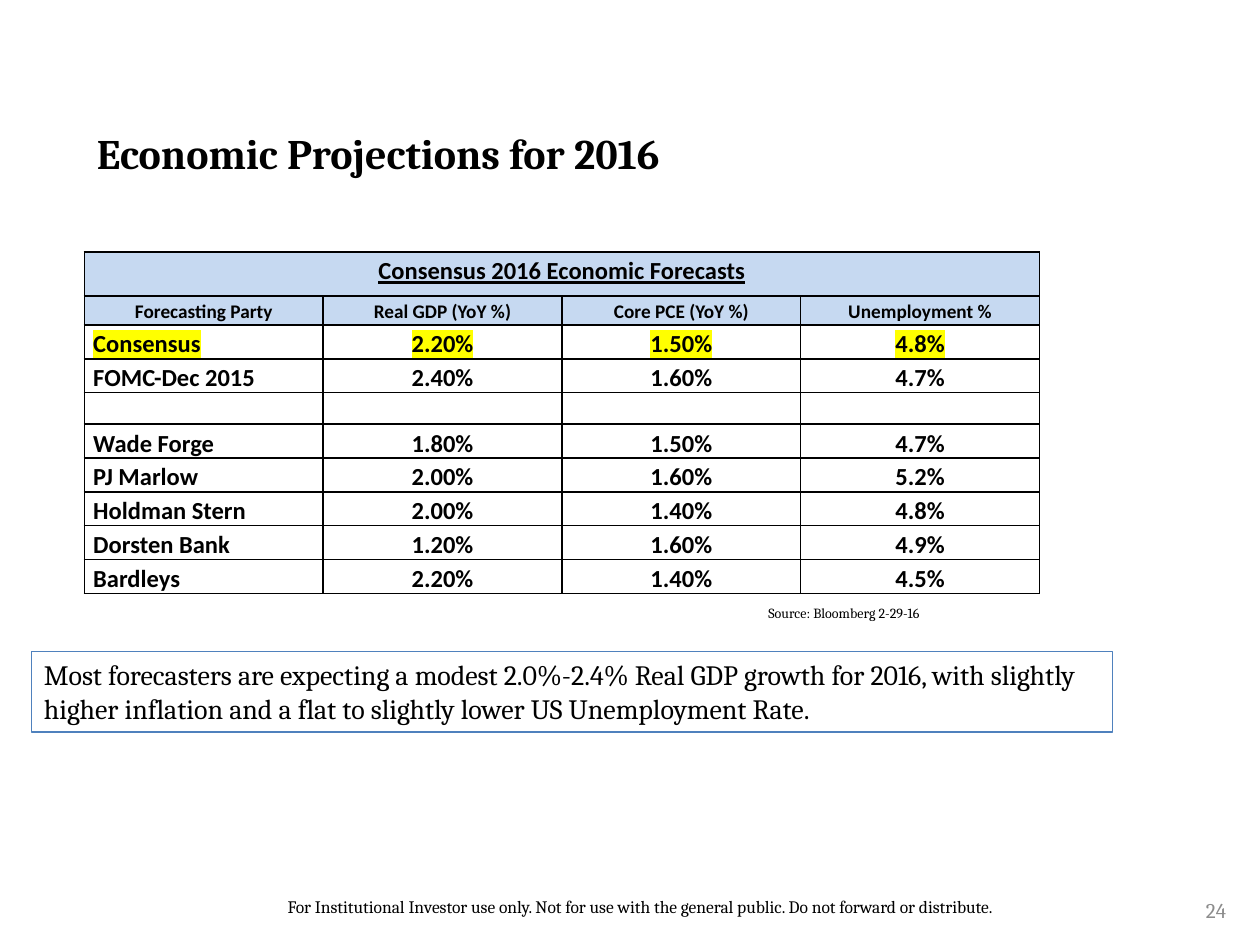
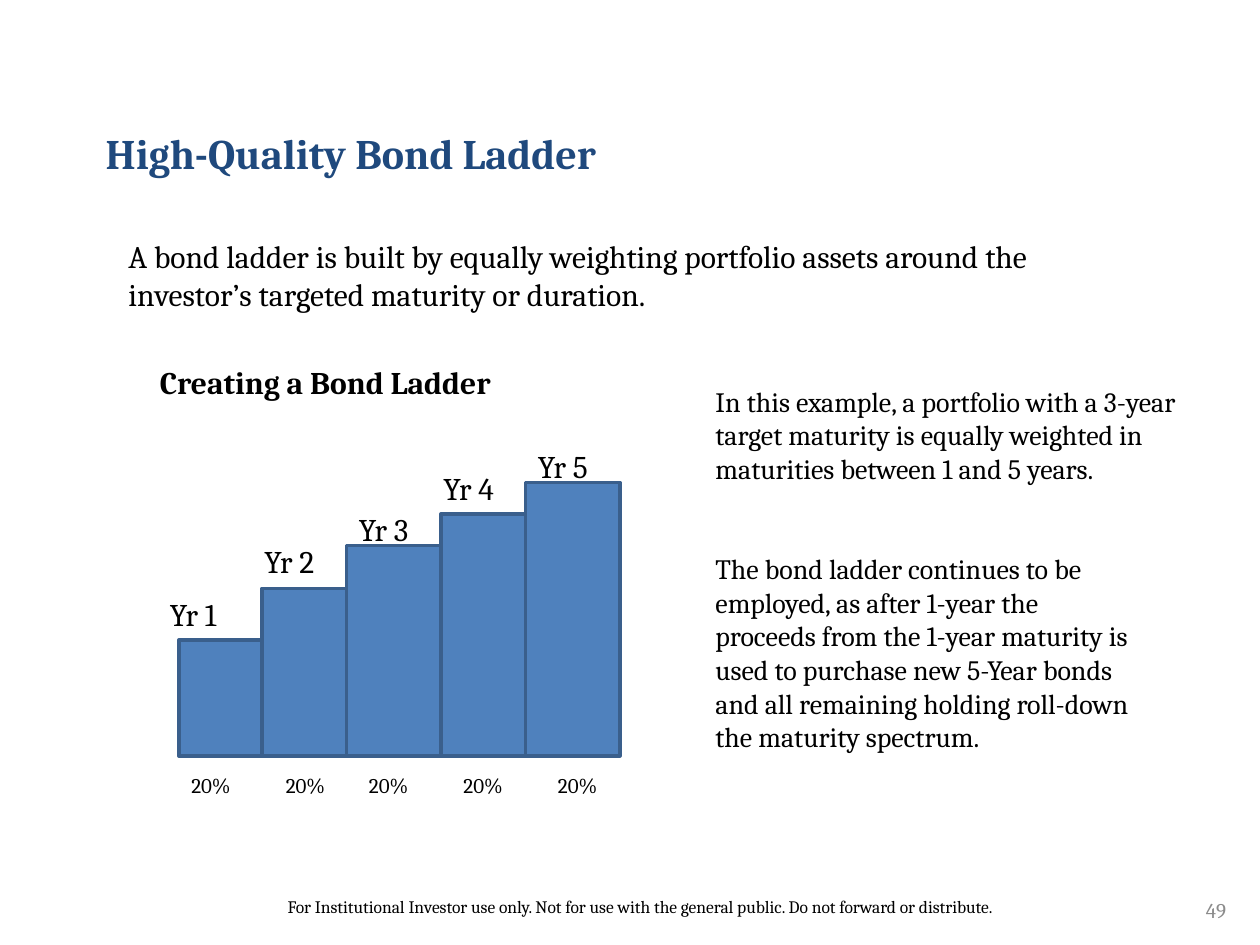
from pptx import Presentation
from pptx.util import Inches, Pt
from pptx.dml.color import RGBColor as RGB
from pptx.enum.shapes import MSO_SHAPE as SHAPE
from pptx.enum.text import PP_ALIGN as AL, MSO_ANCHOR as ANCHOR
from pptx.oxml.ns import qn
from lxml.etree import SubElement as Sub

# Content
NOTICE = ("For Institutional Investor use only. Not for use with the general "
          "public. Do not forward or distribute.")
CAST = {
    "title": "Economic Projections for 2016",
    "page": "24",
    "head": "Consensus 2016 Economic Forecasts",
    "cols": ("Forecasting Party", "Real GDP (YoY %)", "Core PCE (YoY %)", "Unemployment %"),
    "rows": [
        ("Consensus", "2.20%", "1.50%", "4.8%"),
        ("FOMC-Dec 2015", "2.40%", "1.60%", "4.7%"),
        ("", "", "", ""),
        ("Wade Forge", "1.80%", "1.50%", "4.7%"),
        ("PJ Marlow", "2.00%", "1.60%", "5.2%"),
        ("Holdman Stern", "2.00%", "1.40%", "4.8%"),
        ("Dorsten Bank", "1.20%", "1.60%", "4.9%"),
        ("Bardleys", "2.20%", "1.40%", "4.5%"),
    ],
    "source": "Source: Bloomberg 2-29-16",
    "note": "Most forecasters are expecting a modest 2.0%-2.4% Real GDP growth for 2016, "
            "with slightly higher inflation and a flat to slightly lower US Unemployment Rate.",
}
LADDER = {
    "title": "High-Quality Bond Ladder",
    "page": "49",
    "intro": "A bond ladder is built by equally weighting portfolio assets around the "
             "investor’s targeted maturity or duration.",
    "head": "Creating a Bond Ladder",
    "first": "In this example, a portfolio with a 3-year target maturity is equally "
             "weighted in maturities between 1 and 5 years.",
    "then": "The bond ladder continues to be employed, as after 1-year the proceeds from "
            "the 1-year maturity is used to purchase new 5-Year bonds and all remaining "
            "holding roll-down the maturity spectrum.",
}
# Rung: name, bar top, name left and top, share left
RUNGS = [
    ("Yr 1", 5.08, 1.25, 4.67, 1.42),
    ("Yr 2", 4.67, 2, 4.25, 2.17),
    ("Yr 3", 4.33, 2.75, 4, 2.83),
    ("Yr 4", 4.08, 3.42, 3.67, 3.58),
    ("Yr 5", 3.83, 4.17, 3.5, 4.33),
]
EDGES = (1.42, 2.08, 2.75, 3.5, 4.17, 4.92)
BASE = 6
SHARE = "20%"

# Shared style
COLOR = {"ink": "000000", "navy": "1F497D", "gray": "8C8C8C", "blue": "4F81BD",
         "edge": "3A5F8C", "pale": "C6D9F1", "mark": "FFFF00"}


def rgb(name):
    return RGB.from_string(COLOR[name])


def write(frame, text, size, color="ink", bold=False, align=AL.LEFT, font="Cambria"):
    para = frame.paragraphs[0]
    para.text = text
    para.alignment = align
    for run in para.runs:
        face = run.font
        face.name, face.size, face.bold = font, Pt(size), bold
        face.color.rgb = rgb(color)
    return para


def label(slide, box, text, size, anchor=ANCHOR.TOP, **style):
    frame = slide.shapes.add_textbox(*map(Inches, box)).text_frame
    frame.word_wrap = True
    frame.vertical_anchor = anchor
    write(frame, text, size, **style)


def block(slide, box, line, width, fill=None):
    shape = slide.shapes.add_shape(SHAPE.RECTANGLE, *map(Inches, box))
    shape.shadow.inherit = False
    if fill:
        shape.fill.solid()
        shape.fill.fore_color.rgb = rgb(fill)
    else:
        shape.fill.background()
    shape.line.color.rgb = rgb(line)
    shape.line.width = Pt(width)
    return shape


def page(deck, data, color, left=0.67):
    slide = deck.slides.add_slide(deck.slide_layouts[6])
    label(slide, (1.83, 7.06, 6.5, 0.27), NOTICE, 10, align=AL.CENTER)
    label(slide, (left, 0.75, 7.83, 0.92), data["title"], 24, ANCHOR.MIDDLE,
          color=color, bold=True)
    label(slide, (7.5, 7.02, 2.33, 0.4), data["page"], 12, ANCHOR.MIDDLE,
          color="gray", align=AL.RIGHT)
    return slide


# Table cells
def border(cell):
    props = cell._tc.get_or_add_tcPr()
    for side in ("lnL", "lnR", "lnT", "lnB"):
        line = Sub(props, qn("a:" + side), w=str(Pt(1)))
        Sub(Sub(line, qn("a:solidFill")), qn("a:srgbClr"), val=COLOR["ink"])


def mark(run):
    light = run._r.makeelement(qn("a:highlight"), {})
    Sub(light, qn("a:srgbClr"), val=COLOR["mark"])
    run._r.rPr.find(qn("a:solidFill")).addnext(light)


def put(cell, text, size, align, fill=None):
    cell.margin_left = cell.margin_right = Inches(0.07)
    cell.margin_top = cell.margin_bottom = 0
    border(cell)
    if fill:
        cell.fill.solid()
        cell.fill.fore_color.rgb = rgb(fill)
    else:
        cell.fill.background()
    para = write(cell.text_frame, text, size, bold=True, align=align, font="Calibri")
    if text:
        para.line_spacing = 1.15
    else:
        Sub(para._p, qn("a:endParaRPr"), sz="1200")
    return para


def forecast(slide):
    rows = [(CAST["head"], "", "", ""), CAST["cols"], *CAST["rows"]]
    high = [0.35, 0.23] + [0.25] * len(CAST["rows"])
    table = slide.shapes.add_table(len(rows), 4, Inches(0.67), Inches(2),
                                   Inches(7.58), Inches(sum(high))).table
    table.first_row = table.horz_banding = False
    for col in table.columns:
        col.width = Inches(7.58 / 4)
    for r, row in enumerate(rows):
        table.rows[r].height = Inches(high[r])
        top = r < 2
        for c, text in enumerate(row):
            align = AL.CENTER if top or c else AL.LEFT
            para = put(table.cell(r, c), text, 11 if r == 1 else 14, align,
                       "pale" if top else None)
            for run in para.runs:
                run.font.underline = r == 0
                if r == 2:
                    mark(run)
    table.cell(0, 0).merge(table.cell(0, 3))


# Slides
def projections(deck):
    slide = page(deck, CAST, "ink")
    forecast(slide)
    note = block(slide, (0.25, 5.17, 8.58, 0.64), "blue", 0.75)
    note.text_frame.word_wrap = True
    note.text_frame.vertical_anchor = ANCHOR.TOP
    write(note.text_frame, CAST["note"], 16)
    label(slide, (6, 4.75, 2.58, 0.24), CAST["source"], 8)


def ladder(deck):
    slide = page(deck, LADDER, "navy", 0.74)
    for (year, top, x, y, part), left, right in zip(RUNGS, EDGES, EDGES[1:]):
        block(slide, (left, top, right - left, BASE - top), "edge", 2, "blue")
        label(slide, (x, y, 0.75, 0.4), year, 18)
        label(slide, (part, BASE + 0.08, 0.67, 0.3), SHARE, 12)
    label(slide, (1.17, 2.83, 3.33, 0.42), LADDER["head"], 18, bold=True)
    label(slide, (0.92, 1.83, 7.75, 0.71), LADDER["intro"], 18)
    label(slide, (5.58, 3, 3.92, 1.18), LADDER["first"], 16)
    label(slide, (5.58, 4.33, 3.58, 1.72), LADDER["then"], 16)


def main():
    deck = Presentation()
    deck.slide_width, deck.slide_height = Inches(10), Inches(7.5)
    projections(deck)
    ladder(deck)
    deck.save("out.pptx")


if __name__ == "__main__":
    main()
